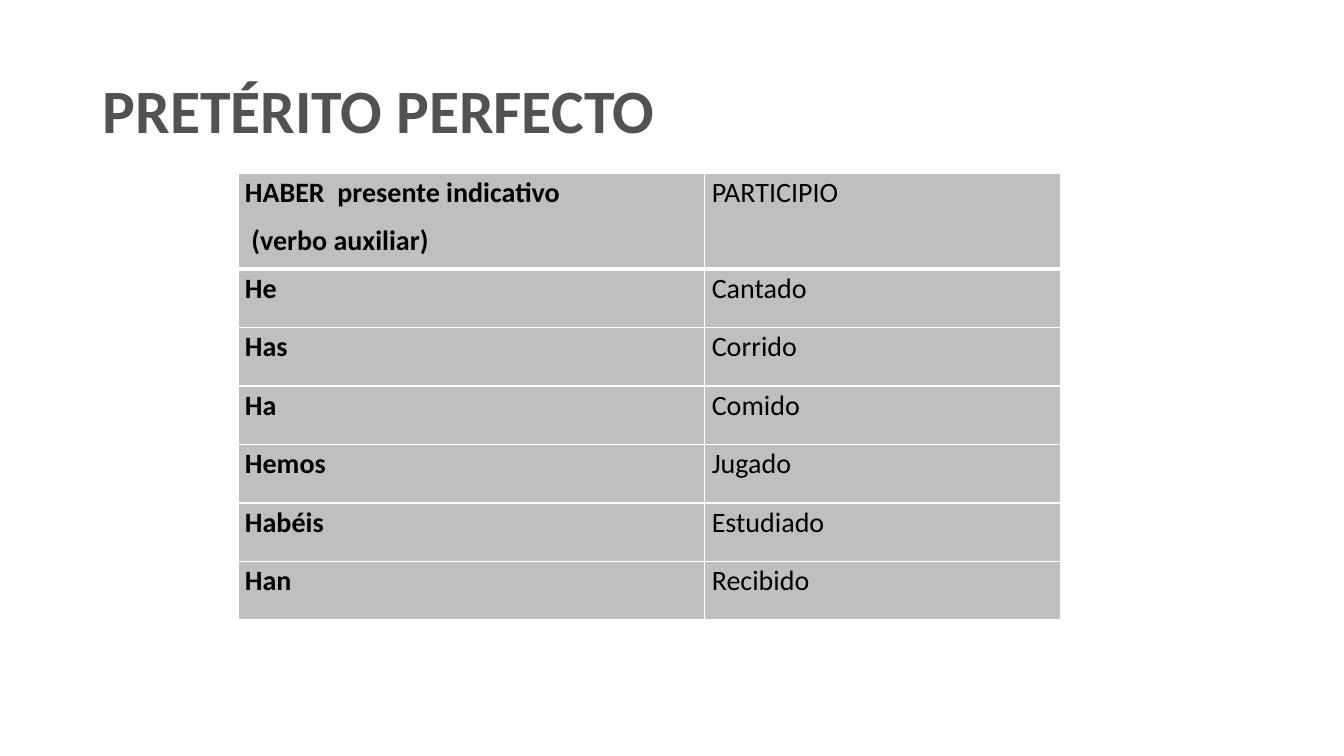
from dataclasses import dataclass

from lxml.etree import SubElement
from pptx import Presentation
from pptx.dml.color import RGBColor
from pptx.enum.text import MSO_ANCHOR, PP_ALIGN
from pptx.oxml.ns import qn
from pptx.slide import Slide
from pptx.table import _Cell as Cell
from pptx.text.text import _Paragraph as Paragraph
from pptx.util import Inches, Pt


@dataclass(frozen=True)
class Theme:
    font: str = "Calibri"
    title_color: str = "525252"
    text_color: str = "000000"
    cell_fill: str = "BFBFBF"
    border: str = "FFFFFF"
    title_size: int = 44
    text_size: int = 20
    thin: int = 1
    thick: int = 3


@dataclass(frozen=True)
class VerbRow:
    auxiliary: str
    participle: str
    height: float = 0.58


THEME = Theme()
TITLE = "PRETÉRITO PERFECTO"
COLUMN_WIDTHS = (4.63, 3.53)
ROWS = (
    VerbRow("HABER  presente indicativo\n (verbo auxiliar)", "PARTICIPIO", 0.95),
    VerbRow("He", "Cantado"),
    VerbRow("Has", "Corrido"),
    VerbRow("Ha", "Comido"),
    VerbRow("Hemos", "Jugado"),
    VerbRow("Habéis", "Estudiado"),
    VerbRow("Han", "Recibido"),
)
CELL_FORMAT = {
    "margin_left": Inches(0.07),
    "margin_right": Inches(0.07),
    "margin_top": 0,
    "margin_bottom": 0,
    "vertical_anchor": MSO_ANCHOR.TOP,
}
CELL_PARAGRAPH = {"line_spacing": 1.07, "space_after": Pt(8), "alignment": PP_ALIGN.LEFT}
TITLE_PARAGRAPH = {"line_spacing": 0.9, "alignment": PP_ALIGN.LEFT}


def apply(target: object, values: dict) -> None:
    """Set each named attribute of the target."""
    for name, value in values.items():
        setattr(target, name, value)


def format_paragraph(p: Paragraph, layout: dict, size: int, color: str, bold: bool) -> None:
    apply(p, layout)
    for r in p.runs:
        apply(r.font, {"name": THEME.font, "size": Pt(size), "bold": bold})
        r.font.color.rgb = RGBColor.from_string(color)


def add_borders(cell: Cell, top: int, bottom: int) -> None:
    """Add left, right, top and bottom lines; call before the fill is set."""
    tc_pr = cell._tc.get_or_add_tcPr()
    widths = {"lnL": THEME.thin, "lnR": THEME.thin, "lnT": top, "lnB": bottom}
    for tag, width in widths.items():
        line = SubElement(tc_pr, qn(f"a:{tag}"), w=str(Pt(width)))
        fill = SubElement(line, qn("a:solidFill"))
        SubElement(fill, qn("a:srgbClr"), val=THEME.border)


def fill_cell(cell: Cell, text: str, bold: bool, row: int) -> None:
    add_borders(
        cell,
        top=THEME.thick if row == 1 else THEME.thin,
        bottom=THEME.thick if row == 0 else THEME.thin,
    )
    cell.fill.solid()
    cell.fill.fore_color.rgb = RGBColor.from_string(THEME.cell_fill)
    apply(cell, CELL_FORMAT)
    cell.text_frame.text = text
    for p in cell.text_frame.paragraphs:
        format_paragraph(p, CELL_PARAGRAPH, THEME.text_size, THEME.text_color, bold)


def add_title(s: Slide) -> None:
    title = s.shapes.title
    apply(title, {"left": Inches(0.92), "top": Inches(0.4),
                  "width": Inches(11.5), "height": Inches(1.45)})
    tf = title.text_frame
    tf.text = TITLE
    tf.vertical_anchor = MSO_ANCHOR.MIDDLE
    format_paragraph(tf.paragraphs[0], TITLE_PARAGRAPH,
                     THEME.title_size, THEME.title_color, True)


def add_verb_table(s: Slide) -> None:
    table = s.shapes.add_table(
        len(ROWS), len(COLUMN_WIDTHS), Inches(2.36), Inches(1.72),
        Inches(sum(COLUMN_WIDTHS)), Inches(sum(row.height for row in ROWS)),
    ).table
    for column, width in zip(table.columns, COLUMN_WIDTHS):
        column.width = Inches(width)
    for i, row in enumerate(ROWS):
        table.rows[i].height = Inches(row.height)
        fill_cell(table.cell(i, 0), row.auxiliary, True, i)
        fill_cell(table.cell(i, 1), row.participle, False, i)


def main() -> None:
    prs = Presentation()
    prs.slide_width, prs.slide_height = Inches(13.33), Inches(7.5)
    s = prs.slides.add_slide(prs.slide_layouts[5])
    add_title(s)
    add_verb_table(s)
    prs.save("out.pptx")


if __name__ == "__main__":
    main()
